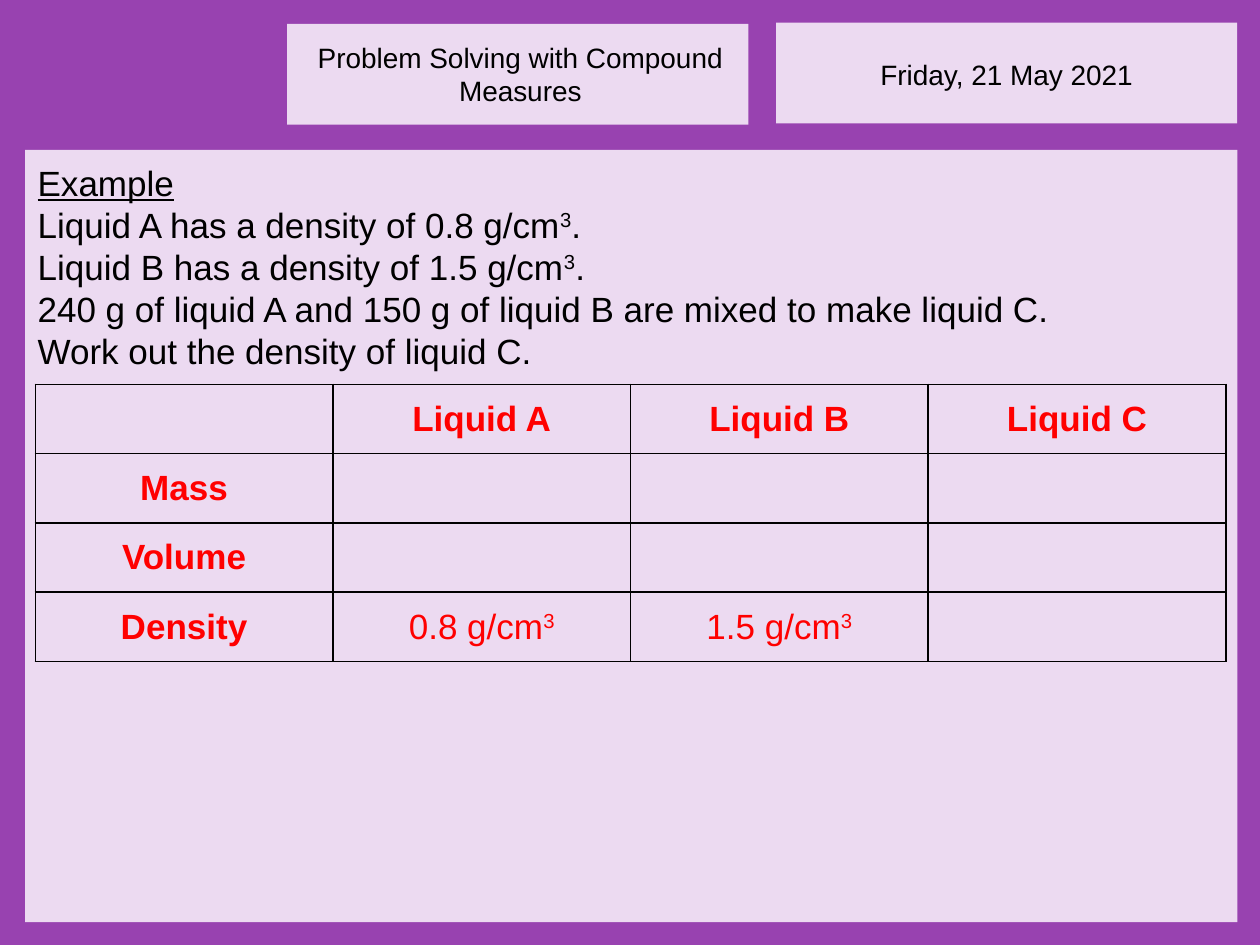
from lxml import etree
from pptx import Presentation
from pptx.dml.color import RGBColor
from pptx.enum.shapes import MSO_SHAPE as Shape
from pptx.enum.text import MSO_ANCHOR as Anchor, PP_ALIGN as Align
from pptx.oxml.ns import qn
from pptx.util import Inches, Pt

COLORS = {"frame": "9842B0", "panel": "ECDAF1", "text": "000000", "answer": "FF0000"}
FONT = "Arial"
CUBED = "³"

PANELS = [
    ("frame", (0, 0, 10, 7.5)),
    ("panel", (6.16, 0.18, 3.66, 0.8)),
    ("panel", (2.28, 0.19, 3.66, 0.8)),
    ("panel", (0.2, 1.19, 9.62, 6.13)),
]
HEADERS = [
    ("Friday, 21 May 2021", (6.16, 0.41, 3.66, 0.37)),
    ("Problem Solving with Compound Measures", (2.3, 0.27, 3.66, 0.64)),
]
EXAMPLE_TITLE = "Example"
EXAMPLE_LINES = [
    "Liquid A has a density of 0.8 g/cm³.",
    "Liquid B has a density of 1.5 g/cm³.",
    "240 g of liquid A and 150 g of liquid B are mixed to make liquid C.",
    "Work out the density of liquid C.",
]
EXAMPLE_BOX = (0.2, 1.23, 9.61, 1.78)
TABLE_ROWS = [
    ["", "Liquid A", "Liquid B", "Liquid C"],
    ["Mass", "", "", ""],
    ["Volume", "", "", ""],
    ["Density", "0.8 g/cm³", "1.5 g/cm³", ""],
]
TABLE_BOX = (0.28, 3.05, 9.45, 2.2)


def color(name):
    return RGBColor.from_string(COLORS[name])


def inches(box):
    return [Inches(value) for value in box]


def write(paragraph, text, size, color_name="text", align=None, bold=False, underline=False):
    paragraph.alignment = align
    before, cubed, after = text.partition(CUBED)
    for part, raised in ((before, False), ("3" if cubed else "", True), (after, False)):
        if not part:
            continue
        run = paragraph.add_run()
        run.text = part
        font = run.font
        font.name, font.size = FONT, Pt(size)
        font.bold, font.underline = bold, underline
        font.color.rgb = color(color_name)
        if raised:
            run._r.get_or_add_rPr().set("baseline", "30000")


def add_text_frame(slide, box):
    text_frame = slide.shapes.add_textbox(*inches(box)).text_frame
    text_frame.word_wrap = True
    return text_frame


def add_borders(cell):
    properties = cell._tc.get_or_add_tcPr()
    for position, side in enumerate(("lnL", "lnR", "lnT", "lnB")):
        line = etree.Element(qn(f"a:{side}"), w=str(Pt(1)))
        fill = etree.SubElement(line, qn("a:solidFill"))
        etree.SubElement(fill, qn("a:srgbClr"), val=COLORS["text"])
        properties.insert(position, line)


def add_table(slide):
    row_count, column_count = len(TABLE_ROWS), len(TABLE_ROWS[0])
    table = slide.shapes.add_table(row_count, column_count, *inches(TABLE_BOX)).table
    table.first_row = table.horz_banding = False
    for row_index, row in enumerate(TABLE_ROWS):
        for column_index, text in enumerate(row):
            cell = table.cell(row_index, column_index)
            cell.vertical_anchor = Anchor.MIDDLE
            cell.fill.background()
            add_borders(cell)
            is_heading = row_index == 0 or column_index == 0
            write(cell.text_frame.paragraphs[0], text, 20, "answer", Align.CENTER, bold=is_heading)


def main():
    presentation = Presentation()
    presentation.slide_width, presentation.slide_height = Inches(10), Inches(7.5)
    slide = presentation.slides.add_slide(presentation.slide_layouts[6])

    for color_name, box in PANELS:
        shape = slide.shapes.add_shape(Shape.RECTANGLE, *inches(box))
        shape.shadow.inherit = False
        shape.fill.solid()
        shape.fill.fore_color.rgb = color(color_name)
        shape.line.fill.background()

    for text, box in HEADERS:
        write(add_text_frame(slide, box).paragraphs[0], text, 16, align=Align.CENTER)

    example = add_text_frame(slide, EXAMPLE_BOX)
    write(example.paragraphs[0], EXAMPLE_TITLE, 20, underline=True)
    for line in EXAMPLE_LINES:
        write(example.add_paragraph(), line, 20)

    add_table(slide)
    presentation.save("out.pptx")


if __name__ == "__main__":
    main()
